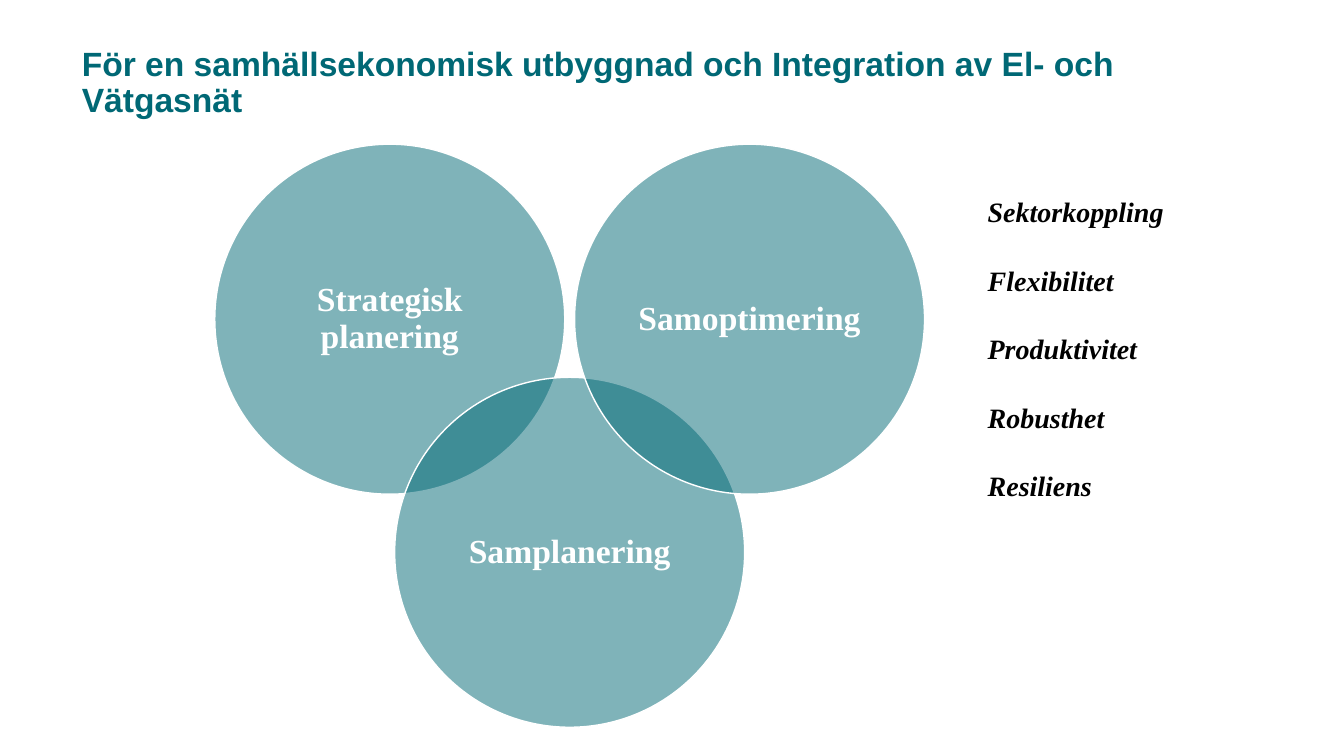
from lxml import etree
from pptx import Presentation
from pptx.dml.color import RGBColor
from pptx.enum.shapes import MSO_SHAPE
from pptx.enum.text import MSO_ANCHOR, PP_ALIGN
from pptx.oxml.ns import qn
from pptx.util import Pt

ELLIPSE = MSO_SHAPE.OVAL
TOP, MIDDLE = MSO_ANCHOR.TOP, MSO_ANCHOR.MIDDLE
LEFT, CENTER = PP_ALIGN.LEFT, PP_ALIGN.CENTER

TITLE = "För en samhällsekonomisk utbyggnad och Integration av El- och Vätgasnät"
CIRCLES = [("Strategisk planering", 0), ("Samplanering", 1), ("Samoptimering", 0)]
BENEFITS = ["Sektorkoppling", "Flexibilitet", "Produktivitet", "Robusthet", "Resiliens"]

COLORS = {"teal": "006875", "white": "FFFFFF", "black": "000000"}
SANS, SERIF = "Arial", "Times New Roman"
DIAMETER = 250
CIRCLES_LEFT, CIRCLES_TOP = 153.4, 103
STEP_ACROSS, STEP_DOWN = 128.5, 166.5
INSET = 7.2


def color(name):
    return RGBColor.from_string(COLORS[name])


def write(paragraph, text, font_name, size, color_name, alignment, italic=False):
    paragraph.alignment = alignment
    run = paragraph.add_run()
    run.text = text
    font = run.font
    font.name = font_name
    font.size = Pt(size)
    font.bold = True
    font.italic = italic
    font.color.rgb = color(color_name)


def add_title(slide):
    title = slide.shapes.title
    title.left, title.top, title.width, title.height = Pt(51.2), Pt(30), Pt(817), Pt(74)
    frame = title.text_frame
    frame.word_wrap = True
    frame.vertical_anchor = TOP
    paragraph = frame.paragraphs[0]
    paragraph.line_spacing = 0.9
    write(paragraph, TITLE, SANS, 24, "teal", LEFT)


def add_circle(slide, label, column, row):
    left = CIRCLES_LEFT + column * STEP_ACROSS
    top = CIRCLES_TOP + row * STEP_DOWN
    circle = slide.shapes.add_shape(ELLIPSE, Pt(left), Pt(top), Pt(DIAMETER), Pt(DIAMETER))
    circle.shadow.inherit = False
    circle.fill.solid()
    circle.fill.fore_color.rgb = color("teal")
    fill_color = circle.fill._xPr.find(qn("a:solidFill"))[0]
    etree.SubElement(fill_color, qn("a:alpha")).set("val", "50000")
    circle.line.color.rgb = color("white")
    circle.line.width = Pt(1)
    frame = circle.text_frame
    frame.word_wrap = True
    frame.vertical_anchor = MIDDLE
    frame.margin_left = frame.margin_right = Pt(INSET)
    frame.margin_top = frame.margin_bottom = Pt(INSET)
    paragraph = frame.paragraphs[0]
    paragraph.line_spacing = 0.9
    write(paragraph, label, SERIF, 24, "white", CENTER)


def add_benefits(slide):
    box = slide.shapes.add_textbox(Pt(698.4), Pt(135.4), Pt(141), Pt(225))
    frame = box.text_frame
    frame.word_wrap = False
    for index, benefit in enumerate(BENEFITS):
        paragraph = frame.add_paragraph() if index else frame.paragraphs[0]
        if index:
            paragraph.space_before = Pt(25)
        write(paragraph, benefit, SERIF, 20, "black", LEFT, italic=True)


def main():
    presentation = Presentation()
    presentation.slide_width, presentation.slide_height = Pt(960), Pt(540)
    slide = presentation.slides.add_slide(presentation.slide_layouts[5])
    add_title(slide)
    for column, (label, row) in enumerate(CIRCLES):
        add_circle(slide, label, column, row)
    add_benefits(slide)
    presentation.save("out.pptx")


if __name__ == "__main__":
    main()
